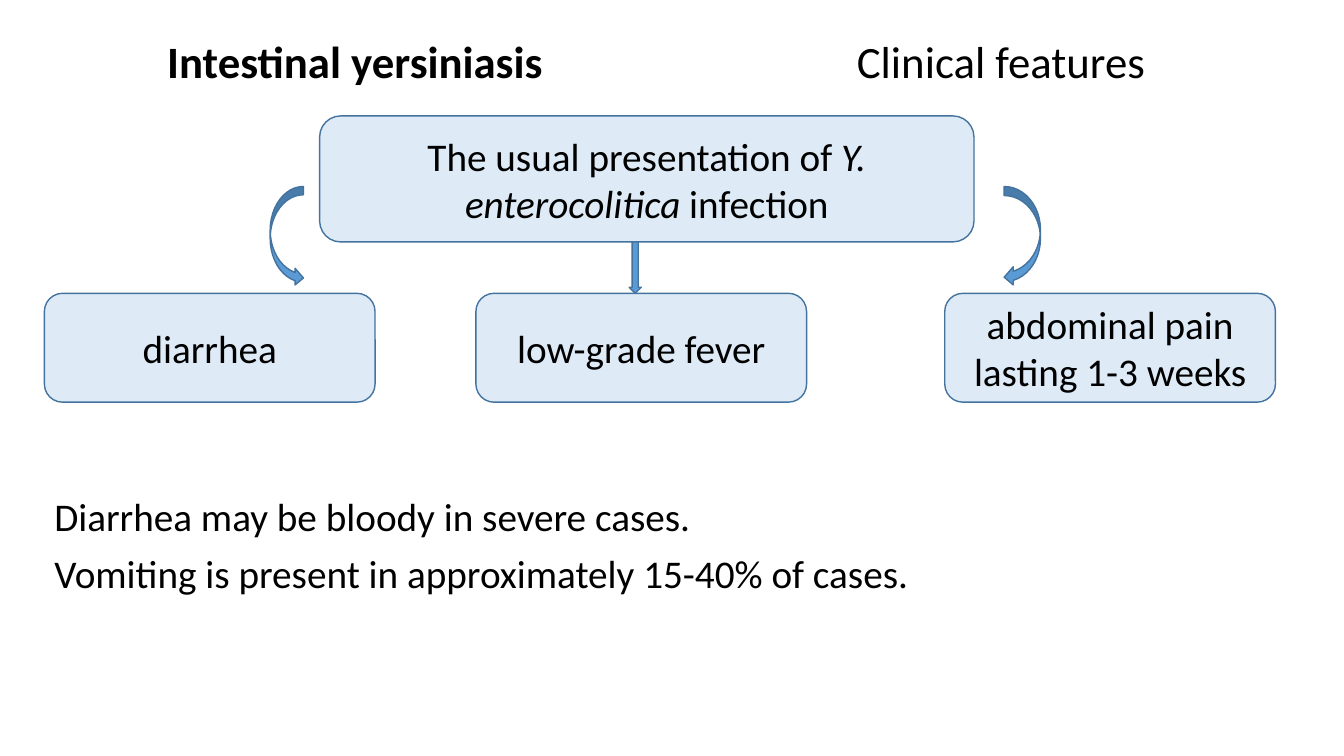
from lxml.etree import SubElement
from pptx import Presentation
from pptx.dml.color import RGBColor
from pptx.enum.shapes import MSO_SHAPE
from pptx.enum.text import MSO_ANCHOR, PP_ALIGN
from pptx.oxml.ns import qn
from pptx.util import Pt

SCALE = 9144
BLACK = RGBColor(0x00, 0x00, 0x00)
PALE = RGBColor(0xDE, 0xEB, 0xF7)
BLUE = RGBColor(0x5B, 0x9B, 0xD5)
EDGE = RGBColor(0x43, 0x73, 0x9E)


def px(*sizes):
    return [size * SCALE for size in sizes]


def add_run(para, text, size=28, bold=False, italic=False):
    run = para.add_run()
    run.text = text
    font = run.font
    font.name = "Calibri"
    font.size = Pt(size)
    font.bold = bold
    font.italic = italic
    font.color.rgb = BLACK


def add_text(slide, place, anchor):
    frame = slide.shapes.add_textbox(*px(*place)).text_frame
    frame.word_wrap = True
    frame.vertical_anchor = anchor
    return frame


def add_title(slide, name, topic):
    frame = add_text(slide, (156, 11, 1157, 105), MSO_ANCHOR.MIDDLE)
    para = frame.paragraphs[0]
    para.line_spacing = 0.9
    tabs = SubElement(para._p.get_or_add_pPr(), qn("a:tabLst"))
    SubElement(tabs, qn("a:tab"), pos=str(684 * SCALE), algn="l")
    add_run(para, name + "\t", 32, bold=True)
    add_run(para, topic, 32)


def add_body(slide, lines):
    frame = add_text(slide, (44, 489, 1197, 187), MSO_ANCHOR.TOP)
    for i, line in enumerate(lines):
        para = frame.add_paragraph() if i else frame.paragraphs[0]
        para.line_spacing = 0.9
        para.space_before = Pt(10)
        add_run(para, line)


def add_form(slide, kind, place, fill):
    form = slide.shapes.add_shape(kind, *px(*place))
    form.shadow.inherit = False
    form.fill.solid()
    form.fill.fore_color.rgb = fill
    form.line.color.rgb = EDGE
    form.line.width = Pt(1)
    return form


def add_box(slide, place, runs):
    frame = add_form(slide, MSO_SHAPE.ROUNDED_RECTANGLE, place, PALE).text_frame
    frame.word_wrap = True
    frame.vertical_anchor = MSO_ANCHOR.MIDDLE
    para = frame.paragraphs[0]
    para.alignment = PP_ALIGN.CENTER
    for text, italic in runs:
        add_run(para, text, italic=italic)


def main():
    deck = Presentation()
    deck.slide_width, deck.slide_height = px(1333, 750)
    slide = deck.slides.add_slide(deck.slide_layouts[6])

    add_body(slide, [
        "Diarrhea may be bloody in severe cases.",
        "Vomiting is present in approximately 15-40% of cases.",
    ])
    add_title(slide, "Intestinal yersiniasis", "Clinical features")

    add_box(slide, (317, 115, 649, 125), [
        ("The usual presentation of ", False),
        ("Y. enterocolitica ", True),
        ("infection", False),
    ])
    signs = [
        (44, "diarrhea"),
        (472, "low-grade fever"),
        (937, "abdominal pain lasting 1-3 weeks"),
    ]
    for left, sign in signs:
        add_box(slide, (left, 291, 328, 108), [(sign, False)])

    arrows = [
        (MSO_SHAPE.DOWN_ARROW, (624, 240, 12, 51)),
        (MSO_SHAPE.CURVED_LEFT_ARROW, (996, 185, 36, 99)),
        (MSO_SHAPE.CURVED_RIGHT_ARROW, (268, 185, 33, 99)),
    ]
    for kind, place in arrows:
        add_form(slide, kind, place, BLUE)

    deck.save("out.pptx")


if __name__ == "__main__":
    main()
